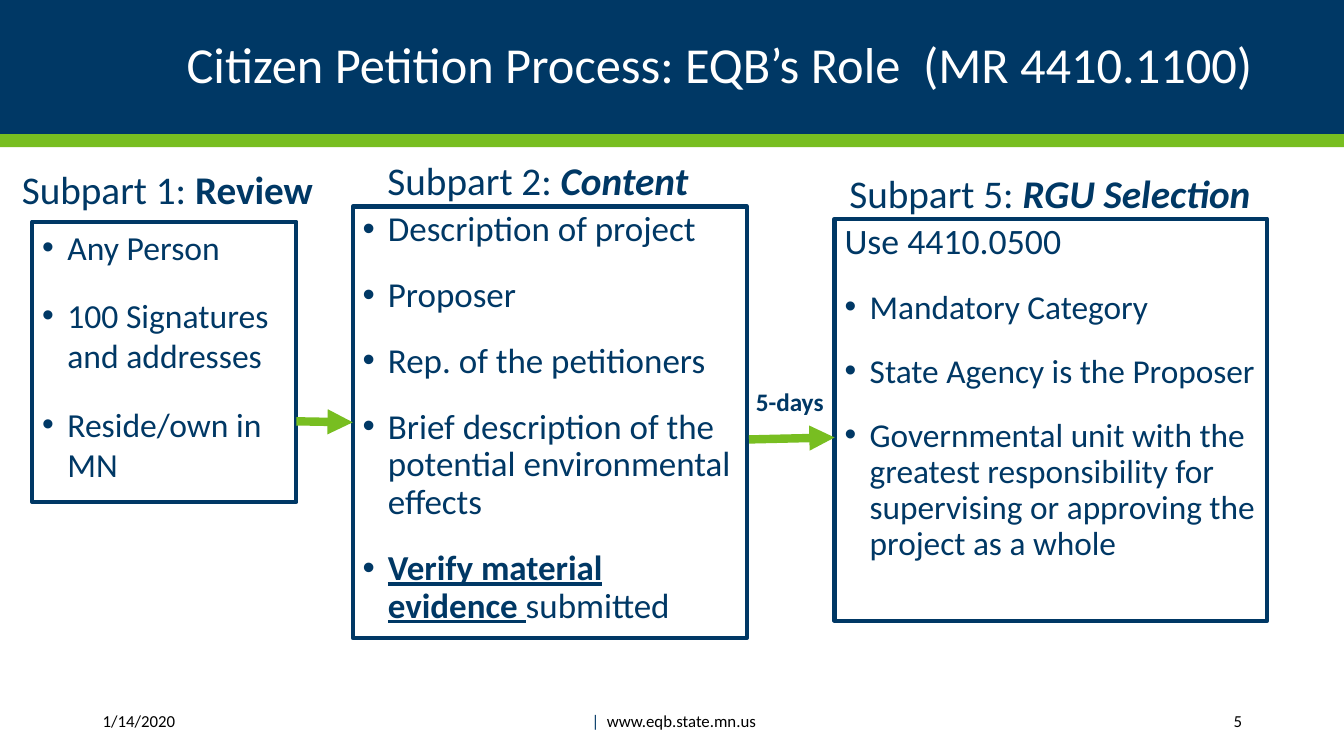
"""Build the slide on the citizen petition process."""
from lxml.etree import SubElement
from pptx import Presentation
from pptx.dml.color import RGBColor
from pptx.enum.shapes import MSO_CONNECTOR, MSO_SHAPE
from pptx.enum.text import MSO_ANCHOR, PP_ALIGN
from pptx.oxml.ns import qn
from pptx.util import Inches, Pt

WIDTH, HEIGHT = Inches(13.33), Inches(7.5)
NAVY, GREEN, WHITE, BLACK = "003865", "78BE21", "FFFFFF", "000000"
LEFT_SIDE = 1
BOLD = {"bold": True}
BOLD_ITALIC = {"bold": True, "italic": True}


def color(value):
    """Turn a hex string into a colour."""
    return RGBColor.from_string(value)


def across(share):
    """Return a percentage of the slide's width."""
    return round(WIDTH * share / 100)


def down(share):
    """Return a percentage of the slide's height."""
    return round(HEIGHT * share / 100)


def area(left, top, width, height):
    """Turn slide percentages into a position and size."""
    return across(left), down(top), across(width), down(height)


def add_span(para, text, size=24, ink=NAVY, bold=False, italic=False, underline=False):
    """Add one formatted run to a paragraph."""
    span = para.add_run()
    span.text = text
    font = span.font
    font.name, font.size = "Calibri", Pt(size)
    font.bold, font.italic, font.underline = bold, italic, underline
    font.color.rgb = color(ink)


def add_para(shape, *spans, align=PP_ALIGN.LEFT, spacing=1.0, gap=0, bullet=False, **style):
    """Add a paragraph made of plain texts or (text, format) pairs."""
    frame = shape.text_frame
    para = frame.paragraphs[0]
    if para.runs:
        para = frame.add_paragraph()
    para.alignment, para.line_spacing = align, spacing
    para.space_before = para.space_after = Pt(gap)
    if bullet:
        add_bullet(para)
    for span in spans:
        text, changes = (span, {}) if isinstance(span, str) else span
        add_span(para, text, **{**style, **changes})


def add_bullet(para):
    """Give a paragraph a navy bullet and a hanging indent."""
    props = para._p.get_or_add_pPr()
    props.set("marL", str(Inches(0.25)))
    props.set("indent", str(-Inches(0.25)))
    fill = SubElement(props, qn("a:buClr"))
    SubElement(fill, qn("a:srgbClr"), val=NAVY)
    SubElement(props, qn("a:buFont"), typeface="Arial")
    SubElement(props, qn("a:buChar"), char="•")


def add_rectangle(page, place, fill=None, line=None, anchor=MSO_ANCHOR.TOP):
    """Add a rectangle with an optional fill and outline."""
    box = page.shapes.add_shape(MSO_SHAPE.RECTANGLE, *area(*place))
    box.shadow.inherit = False
    if fill:
        box.fill.solid()
        box.fill.fore_color.rgb = color(fill)
    else:
        box.fill.background()
    if line:
        box.line.color.rgb = color(line)
        box.line.width = Pt(3)
    else:
        box.line.fill.background()
    box.text_frame.word_wrap = True
    box.text_frame.vertical_anchor = anchor
    return box


def add_label(page, place, *spans, anchor=MSO_ANCHOR.TOP, **style):
    """Add a text box with one paragraph."""
    box = page.shapes.add_textbox(*area(*place))
    box.text_frame.word_wrap = True
    box.text_frame.vertical_anchor = anchor
    add_para(box, *spans, **style)


def add_step(page, heading_place, number, topic, topic_style, box_place):
    """Add a step's heading and its outlined box."""
    add_label(page, heading_place, f"Subpart {number}: ", (topic, topic_style),
              align=PP_ALIGN.CENTER, size=28)
    return add_rectangle(page, box_place, line=NAVY)


def add_items(box, items, **style):
    """Add a bulleted paragraph for each item."""
    for item in items:
        add_para(box, item, bullet=True, gap=10, **style)


def add_arrow(page, start, end):
    """Add a thick green arrow between two points."""
    arrow = page.shapes.add_connector(
        MSO_CONNECTOR.STRAIGHT, across(start[0]), down(start[1]), across(end[0]), down(end[1]))
    arrow.line.color.rgb = color(GREEN)
    arrow.line.width = Pt(6)
    SubElement(arrow.line._get_or_add_ln(), qn("a:tailEnd"), type="triangle")
    SubElement(arrow._element.spPr, qn("a:effectLst"))
    return arrow


def add_header(page):
    """Add the title bar and the green band below it."""
    add_rectangle(page, (0, 17.73, 100, 1.73), fill=GREEN)
    title = add_rectangle(page, (0, 0, 100, 17.73), fill=NAVY, anchor=MSO_ANCHOR.MIDDLE)
    title.text_frame.margin_left = title.text_frame.margin_right = Inches(0.9)
    add_para(title, "Citizen Petition Process: EQB’s Role  (MR 4410.1100)",
             align=PP_ALIGN.RIGHT, spacing=0.9, size=36, ink=WHITE)


def add_footer(page):
    """Add the date, the web address and the page number."""
    address = (" ", ("|", {"ink": NAVY}), "  www.eqb.state.mn.us")
    parts = [
        (6.9, 11.18, PP_ALIGN.LEFT, ("1/14/2020",)),
        (27.08, 45.83, PP_ALIGN.CENTER, address),
        (81.15, 12, PP_ALIGN.RIGHT, ("5",)),
    ]
    for left, width, align, spans in parts:
        add_label(page, (left, 92.67, width, 5.33), *spans, align=align,
                  anchor=MSO_ANCHOR.MIDDLE, size=12, ink=BLACK)


def main():
    """Build and save the deck."""
    deck = Presentation()
    deck.slide_width, deck.slide_height = WIDTH, HEIGHT
    page = deck.slides.add_slide(deck.slide_layouts[6])
    add_header(page)
    add_footer(page)

    review = add_step(page, (0.83, 21.2, 23.25, 7.6), 1, "Review", BOLD,
                      (2.4, 29.33, 19.65, 37.07))
    add_items(review, ["Any Person", "100 Signatures and addresses", "Reside/own in MN"])

    content = add_step(page, (26.93, 20, 26.18, 7.6), 2, "Content", BOLD_ITALIC,
                       (26.25, 27.33, 29.33, 57.07))
    add_items(content, [
        "Description of project",
        "Proposer",
        "Rep. of the petitioners",
        "Brief description of the potential environmental effects",
    ], size=25, spacing=0.9)
    add_para(content, ("Verify material evidence ", {"bold": True, "underline": True}),
             "submitted", bullet=True, gap=10, size=25, spacing=0.9)

    selection = add_step(page, (61.95, 21.73, 32.33, 7.6), 5, "RGU Selection", BOLD_ITALIC,
                         (62.1, 28.93, 32.18, 53.2))
    add_para(selection, "Use 4410.0500", gap=10, size=25.5, spacing=0.9)
    add_items(selection, [
        "Mandatory Category",
        "State Agency is the Proposer",
        "Governmental unit with the greatest responsibility for supervising "
        "or approving the project as a whole",
    ], size=23.8, spacing=0.9)

    to_content = add_arrow(page, (22.05, 55.73), (26.25, 55.87))
    to_content.end_connect(content, LEFT_SIDE)
    add_arrow(page, (55.73, 58.13), (62.1, 57.87))
    add_label(page, (55.5, 50.4, 6.68, 5.33), "5-days", size=18, bold=True)
    deck.save("out.pptx")


if __name__ == "__main__":
    main()
